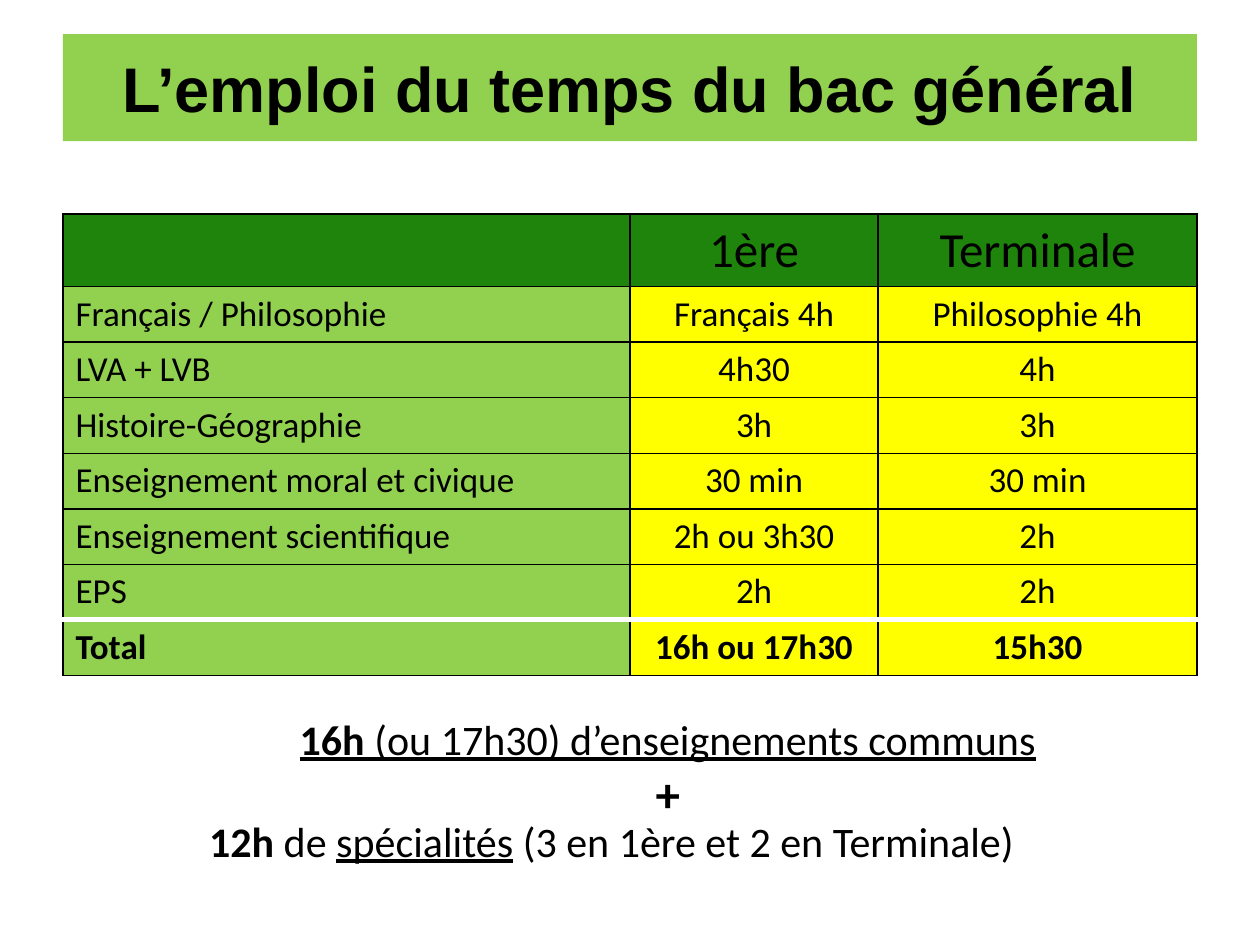
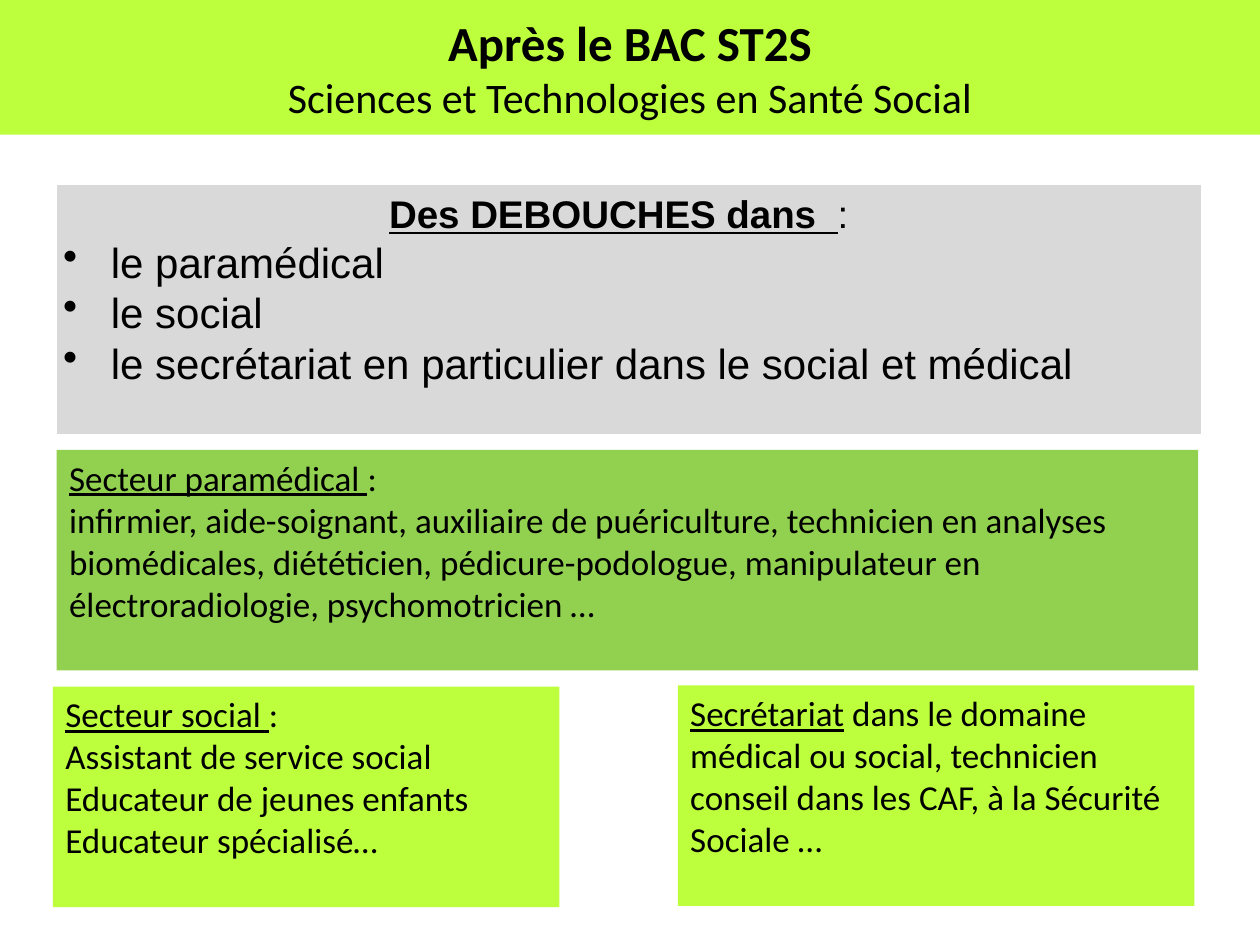
from lxml.etree import SubElement
from pptx import Presentation
from pptx.dml.color import RGBColor
from pptx.enum.shapes import MSO_SHAPE as Shape
from pptx.enum.text import MSO_ANCHOR as Anchor, PP_ALIGN as Align
from pptx.oxml.ns import qn
from pptx.util import Inches, Pt

COLORS = {
    "text": "000000", "white": "FFFFFF", "grey": "D9D9D9", "yellow": "FFFF00",
    "green": "92D050", "dark": "1E840C", "lime": "BDFF3D",
}


def color(name):
    return RGBColor.from_string(COLORS[name])


def line(*spans, size=20, font="Calibri", align=Align.LEFT, bullet=False):
    """One paragraph; a span is a string or a (string, flags) pair, flags from "bu"."""
    return {"spans": [(s, "") if isinstance(s, str) else s for s in spans],
            "size": size, "font": font, "align": align, "bullet": bullet}


class Builder:
    BULLET_INDENT = Inches(0.38)

    def __init__(self):
        self.deck = Presentation()
        self.deck.slide_width, self.deck.slide_height = Inches(10), Inches(7.5)
        self.page = None

    def new_page(self):
        self.page = self.deck.slides.add_slide(self.deck.slide_layouts[6])

    def set_lines(self, frame, lines):
        for index, content in enumerate(lines):
            para = frame.add_paragraph() if index else frame.paragraphs[0]
            para.alignment = content["align"]
            para.font.name, para.font.size = content["font"], Pt(content["size"])
            para.font.color.rgb = color("text")
            flags = {flags for _, flags in content["spans"]}
            if len(flags) == 1:
                self.emphasize(para.font, *flags)
            for text, marks in content["spans"]:
                span = para.add_run()
                span.text = text
                if len(flags) > 1:
                    self.emphasize(span.font, marks)
            if content["bullet"]:
                self.add_bullet(para)

    def emphasize(self, font, marks):
        font.bold, font.underline = "b" in marks, "u" in marks

    def add_bullet(self, para):
        props = para._p.get_or_add_pPr()
        props.set("marL", str(self.BULLET_INDENT))
        props.set("indent", str(-self.BULLET_INDENT))
        bullet = props.makeelement(qn("a:buChar"), {"char": "•"})
        props.insert(0, bullet)

    def fill_frame(self, box, lines, inset, anchor):
        frame = box.text_frame
        frame.word_wrap, frame.vertical_anchor = True, anchor
        frame.margin_left = frame.margin_right = Inches(inset)
        frame.margin_top = frame.margin_bottom = Inches(0.05)
        self.set_lines(frame, lines)

    def panel(self, at, fill, lines, inset=0.1, anchor=Anchor.TOP, outline=None):
        box = self.page.shapes.add_shape(Shape.RECTANGLE, *map(Inches, at))
        box.shadow.inherit = False
        box.fill.solid()
        box.fill.fore_color.rgb = color(fill)
        if outline:
            box.line.color.rgb, box.line.width = color(outline), Pt(0.75)
        else:
            box.line.fill.background()
        self.fill_frame(box, lines, inset, anchor)

    def text(self, at, lines):
        box = self.page.shapes.add_textbox(*map(Inches, at))
        self.fill_frame(box, lines, 0.05, Anchor.TOP)

    def border(self, cell, side, name, width):
        props = cell._tc.get_or_add_tcPr()
        edge = SubElement(props, qn(f"a:ln{side}"), w=str(Pt(width)))
        solid = SubElement(edge, qn("a:solidFill"))
        SubElement(solid, qn("a:srgbClr"), val=COLORS[name])

    def timetable(self, at, widths, heights, rows):
        table = self.page.shapes.add_table(len(rows), len(widths), *map(Inches, at)).table
        table.first_row = table.horz_banding = False
        for column, width in zip(table.columns, widths):
            column.width = Inches(width)
        for row, height in zip(table.rows, heights):
            row.height = Inches(height)
        total = len(rows) - 1
        for r, values in enumerate(rows):
            for c, value in enumerate(values):
                cell = table.cell(r, c)
                # A thick white rule sets the total apart
                for side in "LRTB":
                    thick = (r, side) in ((total - 1, "B"), (total, "T"))
                    self.border(cell, side, *(("white", 3) if thick else ("text", 1)))
                cell.fill.solid()
                fill = "dark" if r == 0 else "yellow" if c else "green"
                cell.fill.fore_color.rgb = color(fill)
                self.set_lines(cell.text_frame, [line(
                    (value, "b" if r == total else ""), size=20 if r else 28,
                    align=Align.CENTER if c else Align.LEFT)])


def timetable_page(builder):
    builder.new_page()

    # Title band
    builder.panel((0.5, 0.27, 9, 0.85), "green", [
        line(("L’emploi du temps du bac général", "b"), size=36, font="Arial",
             align=Align.CENTER)], anchor=Anchor.MIDDLE)

    # Weekly hours
    builder.timetable((0.5, 1.7, 9, 3.6), (4.5, 1.97, 2.53), [0.57] + [0.44] * 7, [
        ("", "1ère", "Terminale"),
        ("Français / Philosophie", "Français 4h", "Philosophie 4h"),
        ("LVA + LVB", "4h30", "4h"),
        ("Histoire-Géographie", "3h", "3h"),
        ("Enseignement moral et civique", "30 min", "30 min"),
        ("Enseignement scientifique", "2h ou 3h30", "2h"),
        ("EPS", "2h", "2h"),
        ("Total", "16h ou 17h30", "15h30"),
    ])

    # Summary
    builder.text((1.17, 5.61, 8.26, 0.98), [
        line(("16h", "bu"), (" (ou 17h30) d’enseignements communs", "u"), size=24,
             align=Align.CENTER),
        line(("+", "b"), size=28, align=Align.CENTER)])
    builder.text((1.61, 6.42, 8.39, 0.5), [
        line(("12h ", "b"), "de ", ("spécialités", "u"),
             " (3 en 1ère et 2 en Terminale)", size=24)])


def outlets_page(builder):
    builder.new_page()

    # Title band
    builder.panel((0, 0, 10, 1.07), "lime", [
        line(("Après le BAC ST2S", "b"), size=28, align=Align.CENTER),
        line("Sciences et Technologies en Santé Social", size=24, align=Align.CENTER),
    ], inset=0.05, anchor=Anchor.MIDDLE)

    # Outlets
    outlets = ("le paramédical", "le social",
               "le secrétariat en particulier dans le social et médical")
    builder.panel((0.45, 1.46, 9.09, 1.99), "grey", [
        line(("Des DEBOUCHES dans  ", "bu"), ":  ", size=22, font="Arial",
             align=Align.CENTER),
        *(line(outlet, size=24, font="Arial", bullet=True) for outlet in outlets),
    ], inset=0.05, outline="white")

    # Sectors
    builder.panel((0.45, 3.57, 9.06, 1.75), "green", [
        line(("Secteur paramédical ", "u"), ":"),
        line("infirmier, aide-soignant, auxiliaire de puériculture, technicien en "
             "analyses biomédicales, diététicien, pédicure-podologue, manipulateur en "
             "électroradiologie, psychomotricien …")])
    builder.panel((0.42, 5.45, 4.02, 1.75), "lime", [
        line(("Secteur social ", "u"), ":"),
        line("Assistant de service social"),
        line("Educateur de jeunes enfants"),
        line("Educateur spécialisé…")])
    builder.panel((5.38, 5.44, 4.1, 1.75), "lime", [
        line(("Secrétariat", "u"),
             " dans le domaine médical ou social, technicien conseil dans les CAF, "
             "à la Sécurité Sociale …")])


def main():
    builder = Builder()
    timetable_page(builder)
    outlets_page(builder)
    builder.deck.save("out.pptx")


if __name__ == "__main__":
    main()
